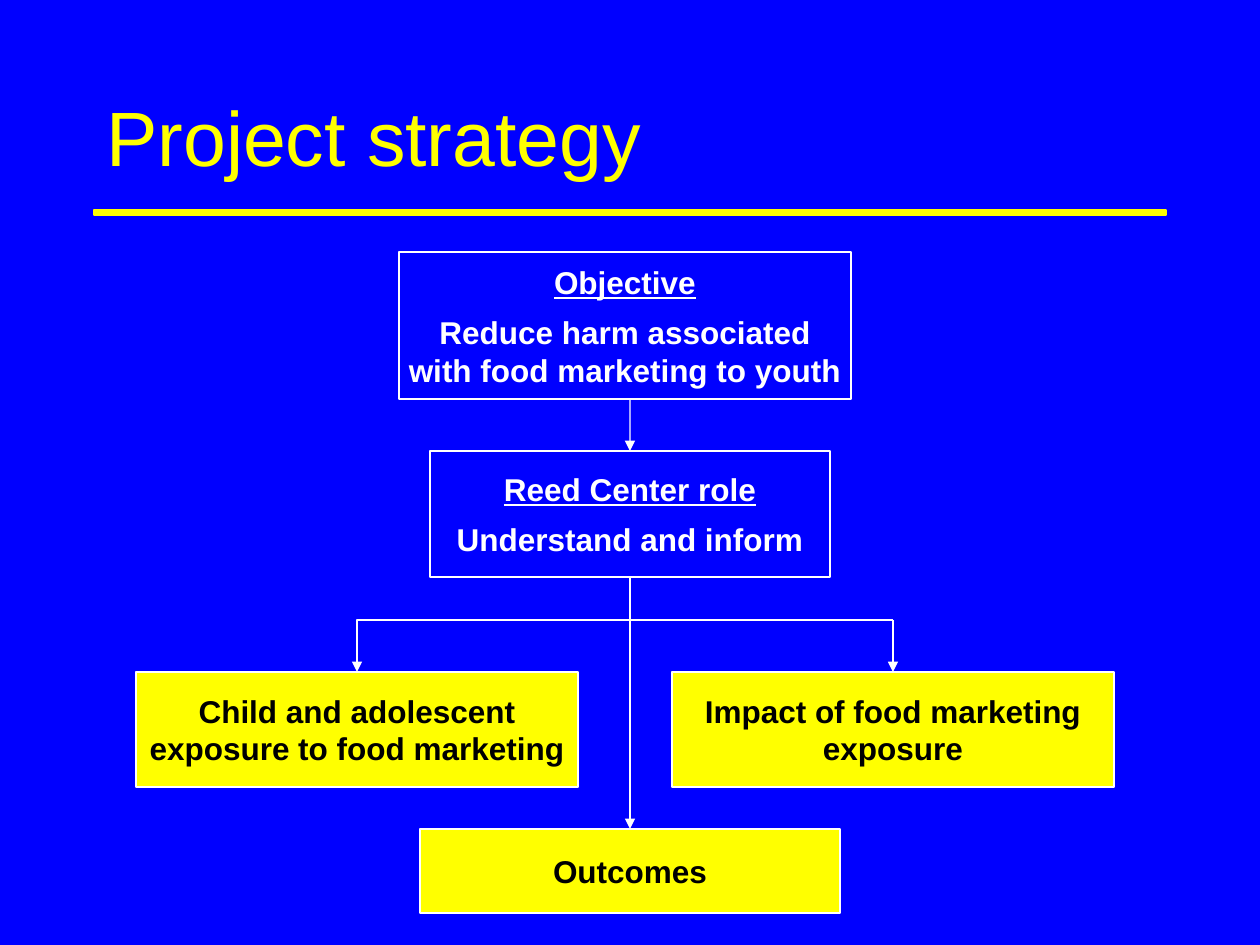
from dataclasses import dataclass

from lxml.etree import SubElement
from pptx import Presentation
from pptx.dml.color import RGBColor as Rgb
from pptx.enum.shapes import MSO_CONNECTOR as Link, MSO_SHAPE as Shape
from pptx.enum.text import MSO_ANCHOR as Anchor, PP_ALIGN as Align
from pptx.oxml.ns import qn
from pptx.util import Emu, Pt

PX = 914400 / 126
TOP, BOTTOM = 0, 2


@dataclass(frozen=True)
class Theme:
    background: Rgb = Rgb(0, 0, 255)
    accent: Rgb = Rgb(255, 255, 0)
    light: Rgb = Rgb(255, 255, 255)
    dark: Rgb = Rgb(0, 0, 0)
    font: str = "Arial"
    title_size: Pt = Pt(44)
    body_size: Pt = Pt(18)
    heading_gap: Pt = Pt(7)
    thin: Pt = Pt(0.75)
    medium: Pt = Pt(1)


THEME = Theme()


def px(*lengths):
    return [Emu(round(length * PX)) for length in lengths]


def style_font(font, size, color, bold=False):
    font.name = THEME.font
    font.size = size
    font.bold = bold
    font.color.rgb = color


def add_title(slide, text, bounds):
    title = slide.shapes.add_textbox(*px(*bounds))
    frame = title.text_frame
    frame.word_wrap = True
    frame.vertical_anchor = Anchor.MIDDLE
    frame.text = text
    style_font(frame.paragraphs[0].runs[0].font, THEME.title_size, THEME.accent)


def add_block(slide, kind, bounds, fill, outline):
    block = slide.shapes.add_shape(kind, *px(*bounds))
    block.shadow.inherit = False
    if fill is None:
        block.fill.background()
    else:
        block.fill.solid()
        block.fill.fore_color.rgb = fill
    block.line.color.rgb = outline
    block.line.width = THEME.thin
    return block


def add_box(slide, bounds, lines, heading=None):
    fill, color = (None, THEME.light) if heading else (THEME.accent, THEME.dark)
    box = add_block(slide, Shape.RECTANGLE, bounds, fill, THEME.light)
    frame = box.text_frame
    frame.word_wrap = False
    frame.vertical_anchor = Anchor.MIDDLE
    frame.text = "\n".join([heading, *lines] if heading else lines)
    for paragraph in frame.paragraphs:
        paragraph.alignment = Align.CENTER
        style_font(paragraph.runs[0].font, THEME.body_size, color, bold=True)
    if heading:
        frame.paragraphs[0].space_after = THEME.heading_gap
        frame.paragraphs[0].runs[0].font.underline = True
    return box


def add_link(slide, start, end, width, elbow=False, arrow=True):
    kind = Link.ELBOW if elbow else Link.STRAIGHT
    link = slide.shapes.add_connector(kind, *px(*start, *end))
    link.line.color.rgb = THEME.light
    link.line.width = width
    properties = link._element.spPr
    if elbow:
        properties.find(qn("a:prstGeom")).set("prst", "bentConnector2")
    if arrow:
        SubElement(properties.find(qn("a:ln")), qn("a:tailEnd"), type="triangle")
    SubElement(properties, qn("a:effectLst"))
    return link


def main():
    deck = Presentation()
    deck.slide_width, deck.slide_height = px(1260, 945)
    slide = deck.slides.add_slide(deck.slide_layouts[6])
    slide.background.fill.solid()
    slide.background.fill.fore_color.rgb = THEME.background

    add_block(slide, Shape.FLOWCHART_PROCESS, (94, 210, 1072, 5), THEME.accent, THEME.accent)
    add_title(slide, "Project strategy", (94, 73, 1072, 126))

    add_box(slide, (399, 252, 452, 147),
            ["Reduce harm associated", "with food marketing to youth"], "Objective")
    role = add_box(slide, (430, 451, 400, 126), ["Understand and inform"], "Reed Center role")
    exposure = add_box(slide, (136, 672, 442, 115),
                       ["Child and adolescent", "exposure to food marketing"])
    impact = add_box(slide, (672, 672, 442, 115), ["Impact of food marketing", "exposure"])
    outcomes = add_box(slide, (420, 829, 420, 84), ["Outcomes"])

    center_x, exposure_x, impact_x, fork_y = 630, 357, 893, 620
    fork = (center_x, fork_y)
    impact_turn = (impact_x, fork_y)

    add_link(slide, impact_turn, (center_x, 577), THEME.medium, elbow=True, arrow=False)
    to_impact = add_link(slide, impact_turn, (impact_x, 672), THEME.medium)
    to_impact.end_connect(impact, TOP)
    add_link(slide, fork, (exposure_x, 672), THEME.medium, elbow=True).end_connect(exposure, TOP)
    to_role = add_link(slide, (center_x, 399), (center_x, 451), THEME.thin)
    to_role.end_connect(role, TOP)
    add_link(slide, fork, (center_x, 829), THEME.thin).end_connect(outcomes, TOP)

    deck.save("out.pptx")


if __name__ == "__main__":
    main()
